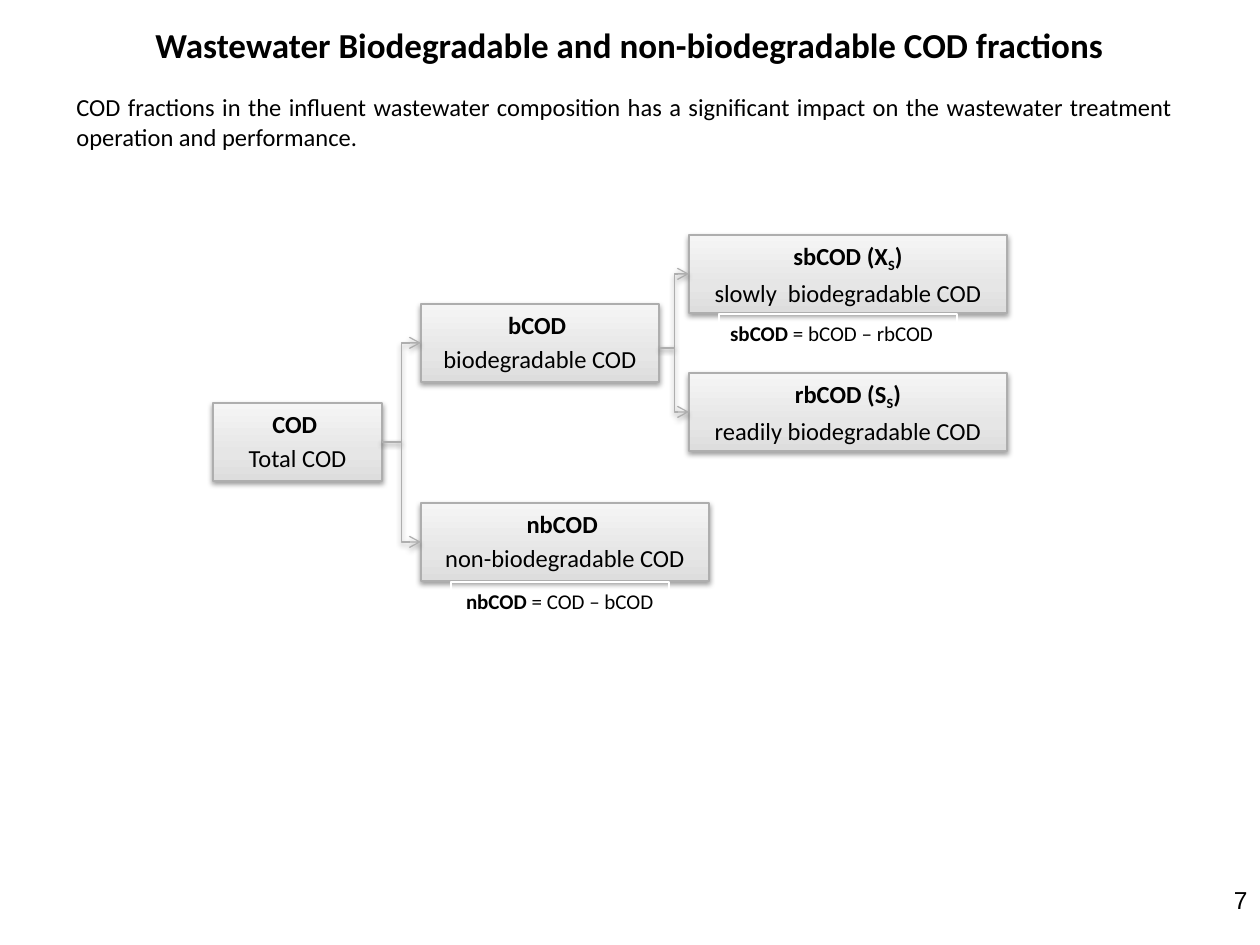
"""Build a slide that splits wastewater COD into its fractions."""
from copy import deepcopy
from dataclasses import dataclass

from lxml import etree
from pptx import Presentation
from pptx import util as u
from pptx.dml.color import RGBColor
from pptx.enum import shapes, text
from pptx.oxml import ns

BLACK = RGBColor(0x00, 0x00, 0x00)
WHITE = RGBColor(0xFF, 0xFF, 0xFF)
EDGE = RGBColor(0xAE, 0xAE, 0xAE)
STOPS = (
    (0, RGBColor(0xDD, 0xDD, 0xDD)),
    (0.35, RGBColor(0xE6, 0xE6, 0xE6)),
    (1, RGBColor(0xF5, 0xF5, 0xF5)),
)
SCALE = 914400 / 126
HIGH = 78
PAD = 13


@dataclass(frozen=True)
class Bit:
    text: str
    bold: bool = False
    base: int = 0


@dataclass(frozen=True)
class Node:
    x: int
    y: int
    w: int
    head: tuple[Bit, ...]
    label: str


@dataclass(frozen=True)
class Note:
    x: int
    y: int
    w: int
    name: str
    rule: str
    pad: int = PAD


@dataclass(frozen=True)
class Link:
    x: int
    y: int
    end: Node


TOTAL = Node(213, 403, 169, (Bit("COD ", True),), "Total COD")
BIO = Node(421, 304, 238, (Bit("bCOD ", True),), "biodegradable COD")
INERT = Node(421, 503, 288, (Bit("nbCOD ", True),), "non-biodegradable COD")
SLOW = Node(689, 235, 318,
            (Bit("sbCOD (X", True), Bit("S", True, -20), Bit(")", True)),
            "slowly  biodegradable COD")
READY = Node(689, 373, 318,
             (Bit("rbCOD (S", True), Bit("S", True, -20), Bit(")", True)),
             "readily biodegradable COD")
NODES = (TOTAL, BIO, INERT, SLOW, READY)
NOTES = (
    Note(719, 314, 238, "sbCOD", " = bCOD – rbCOD", PAD + 12),
    Note(451, 582, 218, "nbCOD", " = COD – bCOD"),
)
LINKS = (Link(382, 442, BIO), Link(382, 442, INERT),
         Link(660, 348, SLOW), Link(660, 348, READY))


def px(n: int) -> u.Emu:
    """Turn pixels into EMU."""
    return u.Emu(round(n * SCALE))


def add(parent, tag: str, **attrs: str):
    """Append one DrawingML element."""
    return etree.SubElement(parent, ns.qn(tag), attrs)


def place(shape, x: int, y: int, w: int, h: int) -> None:
    """Set the position and size of a shape."""
    shape.left, shape.top, shape.width, shape.height = map(px, (x, y, w, h))


def style(font, size: int, bold: bool = False, face: str = "Calibri") -> None:
    """Format a font in black."""
    font.name, font.size, font.bold = face, u.Pt(size), bold
    font.color.rgb = BLACK


def write(para, bits: tuple[Bit, ...], size: int) -> None:
    """Fill a centred paragraph with formatted runs."""
    para.alignment = text.PP_ALIGN.CENTER
    para.space_before = u.Pt(2.8)
    for bit in bits:
        run = para.add_run()
        run.text = bit.text
        style(run.font, size, bit.bold)
        if bit.base:
            run.font._element.set("baseline", str(bit.base * 1000))


def plain(shape, words: str, size: int, align, bold: bool = False,
          face: str = "Calibri") -> None:
    """Set one line of top-anchored, wrapped text."""
    frame = shape.text_frame
    frame.text = words
    frame.word_wrap = True
    frame.auto_size = text.MSO_AUTO_SIZE.NONE
    frame.vertical_anchor = text.MSO_ANCHOR.TOP
    para = frame.paragraphs[0]
    para.alignment = align
    style(para.runs[0].font, size, bold, face)


def shade(props) -> None:
    """Give shape properties a soft shadow below."""
    glow = props.find(ns.qn("a:effectLst"))
    if glow is None:
        glow = add(props, "a:effectLst")
    cast = add(glow, "a:outerShdw", blurRad="40000", dist="20000",
               dir="5400000", rotWithShape="0")
    add(add(cast, "a:srgbClr", val="000000"), "a:alpha", val="38000")


def blend(fill, props) -> None:
    """Apply the three-stop grey gradient."""
    fill.gradient()
    fill.gradient_angle = 90
    stops = props.find(".//" + ns.qn("a:gsLst"))
    stops.append(deepcopy(stops[0]))
    for stop, (pos, color) in zip(fill.gradient_stops, STOPS):
        stop.position = pos
        stop.color.rgb = color


def box(slide, x: int, y: int, w: int, h: int, line: RGBColor):
    """Add an outlined rectangle ready for top-anchored text."""
    shape = slide.shapes.add_shape(shapes.MSO_SHAPE.RECTANGLE,
                                   px(x), px(y), px(w), px(h))
    shape.shadow.inherit = False
    shape.line.color.rgb = line
    shape.line.width = u.Pt(0.75)
    frame = shape.text_frame
    frame.word_wrap = False
    frame.vertical_anchor = text.MSO_ANCHOR.TOP
    return shape


def draw_node(slide, node: Node) -> None:
    """Draw one fraction box."""
    shape = box(slide, node.x, node.y, node.w, HIGH, EDGE)
    props = shape._element.spPr
    blend(shape.fill, props)
    shade(props)
    frame = shape.text_frame
    write(frame.paragraphs[0], node.head, 14)
    write(frame.add_paragraph(), (Bit(node.label),), 14)


def draw_note(slide, note: Note) -> None:
    """Draw the formula below a box."""
    shape = box(slide, note.x, note.y, note.w, 38, WHITE)
    shape.fill.background()
    shape.text_frame.margin_right = px(note.pad)
    bits = (Bit(note.name, True), Bit(note.rule))
    write(shape.text_frame.paragraphs[0], bits, 12)


def draw_link(slide, link: Link) -> None:
    """Draw an elbow arrow to the left side of a box."""
    end = link.end
    line = slide.shapes.add_connector(
        shapes.MSO_CONNECTOR.ELBOW, px(link.x), px(link.y),
        px(end.x), px(end.y + HIGH // 2))
    line.line.color.rgb = EDGE
    line.line.width = u.Pt(0.75)
    props = line._element.spPr
    add(props.find(ns.qn("a:ln")), "a:tailEnd", type="arrow")
    shade(props)


def main() -> None:
    """Build and save the slide."""
    deck = Presentation()
    deck.slide_width, deck.slide_height = px(1260), px(945)
    slide = deck.slides.add_slide(deck.slide_layouts[5])
    title = slide.shapes.title
    place(title, 74, 17, 1111, 55)
    plain(title, "Wastewater Biodegradable and non-biodegradable COD fractions",
          20, text.PP_ALIGN.CENTER, True)
    intro = slide.shapes.add_textbox(px(64), px(86), px(1121), px(72))
    plain(intro, "COD fractions in the influent wastewater composition has a "
          "significant impact on the wastewater treatment operation and "
          "performance.", 14, text.PP_ALIGN.JUSTIFY)
    page = slide.shapes.add_textbox(px(966), px(879), px(294), px(66))
    plain(page, "7", 14, text.PP_ALIGN.RIGHT, face="Arial")
    for draw, items in ((draw_node, NODES), (draw_note, NOTES),
                        (draw_link, LINKS)):
        for item in items:
            draw(slide, item)
    deck.save("out.pptx")


if __name__ == "__main__":
    main()
